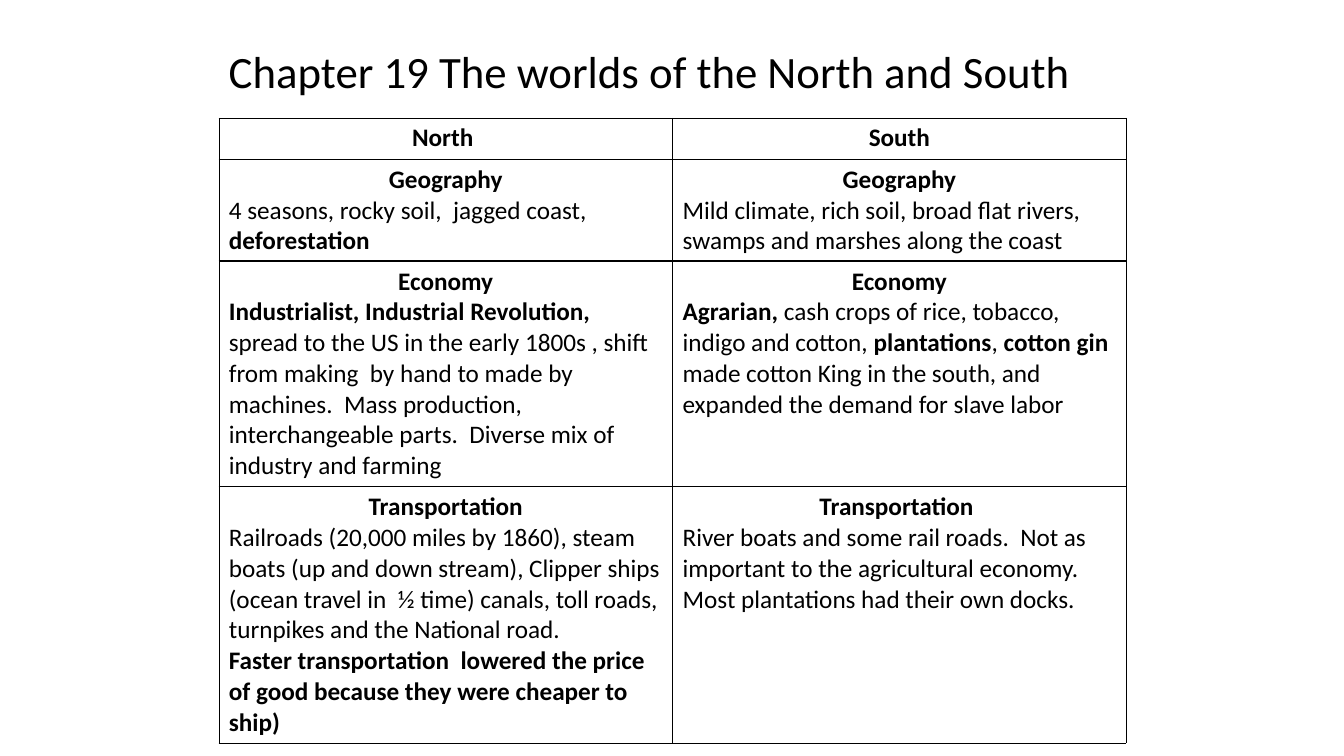
from lxml import etree
from pptx import Presentation
from pptx.dml.color import RGBColor
from pptx.enum.text import MSO_ANCHOR, PP_ALIGN
from pptx.oxml.ns import qn
from pptx.util import Inches, Pt

LEFT, CENTER = PP_ALIGN.LEFT, PP_ALIGN.CENTER
MIDDLE = MSO_ANCHOR.MIDDLE

HEIGHTS = [0.41, 1.01, 2.24, 2.54]

# Each cell holds a centred heading and its body paragraphs; *stars* mark bold words.
ROWS = [
    [["North "], ["South"]],
    [["Geography",
      "4 seasons, rocky soil,  jagged coast, *deforestation*"],
     ["Geography",
      "Mild climate, rich soil, broad flat rivers, swamps and marshes along the coast"]],
    [["Economy",
      "*Industrialist, Industrial Revolution,*",
      "spread to the US in the early 1800s , shift from making  by hand to made by "
      "machines.  Mass production, interchangeable parts.  Diverse mix of industry "
      "and farming"],
     ["Economy",
      "*Agrarian, *cash crops of rice, tobacco, indigo and cotton, *plantations*, "
      "*cotton gin *made cotton King in the south, and expanded the demand for "
      "slave labor"]],
    [["Transportation",
      "Railroads (20,000 miles by 1860), steam boats (up and down stream), Clipper "
      "ships (ocean travel in  ½ time) canals, toll roads, turnpikes and the "
      "National road.",
      "*Faster transportation  lowered the price of good because they were cheaper "
      "to ship)*"],
     ["Transportation ",
      "River boats and some rail roads.  Not as important to the agricultural "
      "economy.  Most plantations had their own docks."]],
]


def paint(code):
    return RGBColor.from_string(code)


class Deck:
    font = "Calibri"
    ink = "000000"
    inner, outer = 1, 0.25

    def __init__(self, wide, high):
        self.file = Presentation()
        self.file.slide_width = Inches(wide)
        self.file.slide_height = Inches(high)
        self.slide = self.file.slides.add_slide(self.file.slide_layouts[6])

    def put(self, para, text, size=18, align=LEFT, space=1.0):
        """Fill a paragraph; every second part between stars is bold."""
        para.alignment = align
        para.line_spacing = space
        for i, part in enumerate(text.split("*")):
            if part:
                run = para.add_run()
                run.text = part
                run.font.name = self.font
                run.font.size = Pt(size)
                run.font.bold = i % 2 == 1
                run.font.color.rgb = paint(self.ink)

    def title(self, text, left, top, width, height):
        box = self.slide.shapes.add_textbox(*map(Inches, (left, top, width, height)))
        frame = box.text_frame
        frame.word_wrap = True
        frame.vertical_anchor = MIDDLE
        self.put(frame.paragraphs[0], text, size=32, space=0.9)

    def border(self, cell, sides):
        """Draw the cell's sides, given as tag and width in points."""
        props = cell._tc.get_or_add_tcPr()
        for i, (side, width) in enumerate(sides.items()):
            line = etree.Element(qn("a:" + side), w=str(Pt(width)))
            fill = etree.SubElement(line, qn("a:solidFill"))
            etree.SubElement(fill, qn("a:srgbClr"), val=self.ink)
            props.insert(i, line)

    def table(self, rows, heights, left, top, width):
        count, cols = len(rows), len(rows[0])
        frame = self.slide.shapes.add_table(
            count, cols, *map(Inches, (left, top, width, sum(heights))))
        grid = frame.table
        grid.first_row = grid.horz_banding = False
        for r, row in enumerate(rows):
            grid.rows[r].height = Inches(heights[r])
            for c, (head, *body) in enumerate(row):
                cell = grid.cell(r, c)
                cell.fill.background()
                edges = {"lnL": c == 0, "lnR": c == cols - 1,
                         "lnT": r == 0, "lnB": r == count - 1}
                self.border(cell, {side: self.outer if edge else self.inner
                                   for side, edge in edges.items()})
                text = cell.text_frame
                self.put(text.paragraphs[0], f"*{head}*", align=CENTER)
                for line in body:
                    self.put(text.add_paragraph(), line)


def main():
    deck = Deck(13.33, 7.5)
    deck.title("Chapter 19 The worlds of the North and South", 2.17, 0.3, 9, 0.87)
    deck.table(ROWS, HEIGHTS, 2.17, 1.17, 9)
    deck.file.save("out.pptx")


if __name__ == "__main__":
    main()
